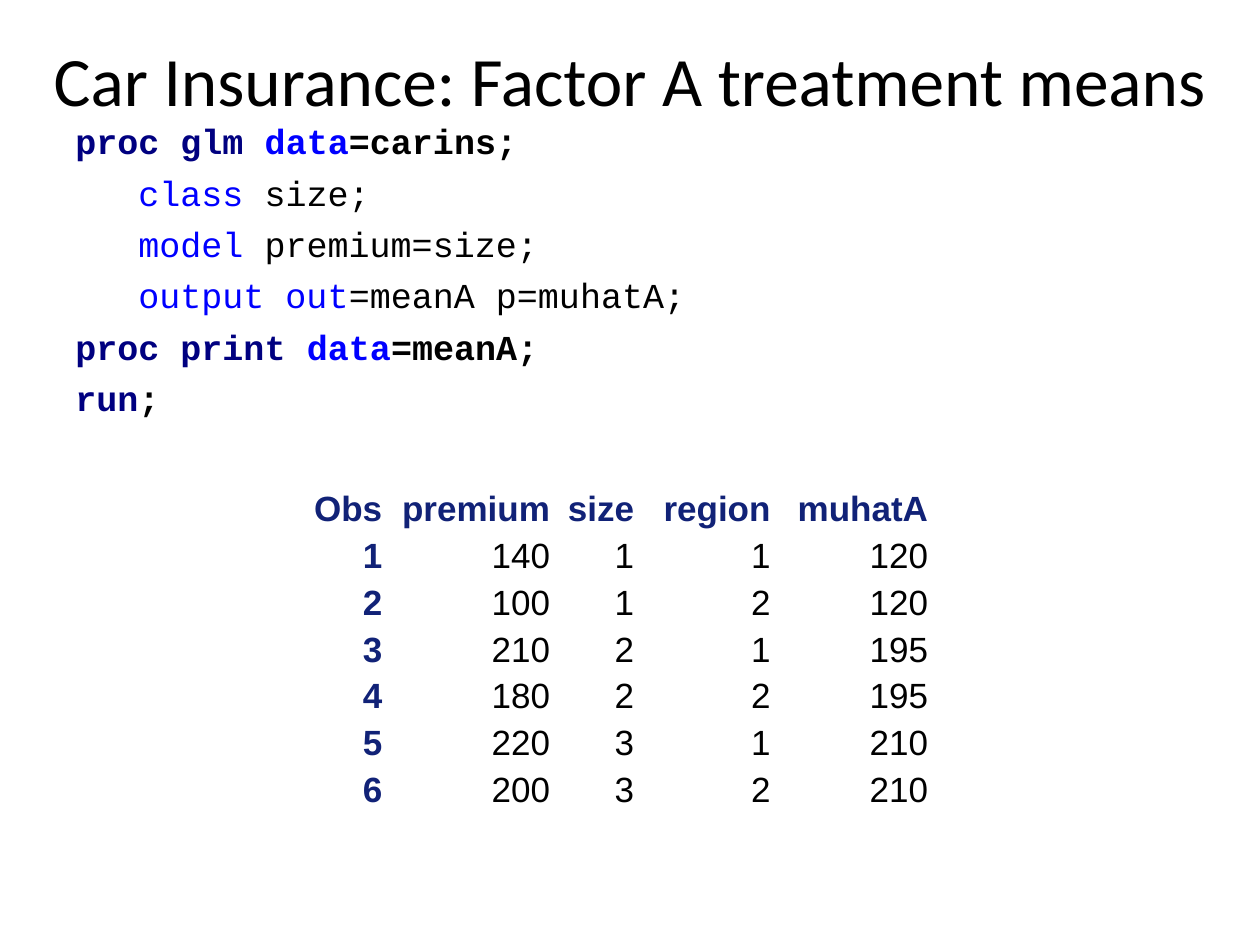
from dataclasses import dataclass

from pptx import Presentation
from pptx.dml.color import RGBColor
from pptx.enum.text import MSO_ANCHOR, PP_ALIGN
from pptx.util import Pt


@dataclass(frozen=True)
class Theme:
    black: RGBColor = RGBColor(0, 0, 0)
    navy: RGBColor = RGBColor(0, 0, 0x80)
    blue: RGBColor = RGBColor(0, 0, 0xFF)
    head: RGBColor = RGBColor(0x11, 0x22, 0x77)
    title: float = 39.6
    body: float = 20


THEME = Theme()

# Each line: indent in points, bold, then (text, colour) parts
CODE = [
    (0, True, [("proc glm ", THEME.navy), ("data", THEME.blue), ("=carins;", THEME.black)]),
    (36, False, [("class", THEME.blue), (" size;", THEME.black)]),
    (36, False, [("model", THEME.blue), (" premium=size;", THEME.black)]),
    (36, False, [("output out", THEME.blue), ("=meanA p=muhatA;", THEME.black)]),
    (0, True, [("proc print ", THEME.navy), ("data", THEME.blue), ("=meanA;", THEME.black)]),
    (0, True, [("run", THEME.navy), (";", THEME.black)]),
]

MEANS = [
    ("Obs", "premium", "size", "region", "muhatA"),
    (1, 140, 1, 1, 120),
    (2, 100, 1, 2, 120),
    (3, 210, 2, 1, 195),
    (4, 180, 2, 2, 195),
    (5, 220, 3, 1, 210),
    (6, 200, 3, 2, 210),
]
WIDTHS = (54, 96, 48, 78, 90)
ROW = 25.7


def set_font(font, name, size, color=None, bold=False):
    font.name, font.size, font.bold = name, Pt(size), bold
    if color is not None:
        font.color.rgb = color


def add_box(slide, left, top, width, height):
    box = slide.shapes.add_textbox(Pt(left), Pt(top), Pt(width), Pt(height))
    box.text_frame.word_wrap = True
    return box.text_frame


def add_title(slide, text):
    frame = add_box(slide, 0, 0, 720, 90)
    frame.vertical_anchor = MSO_ANCHOR.MIDDLE
    para = frame.paragraphs[0]
    para.text = text
    para.alignment = PP_ALIGN.CENTER
    set_font(para.font, "Calibri", THEME.title, THEME.black)


def add_code(slide, lines):
    frame = add_box(slide, 36, 65, 648, 198)
    for i, (indent, bold, parts) in enumerate(lines):
        para = frame.add_paragraph() if i else frame.paragraphs[0]
        para.space_before = Pt(5.3)
        para._p.get_or_add_pPr().set("marL", str(Pt(indent)))
        set_font(para.font, "Courier New", THEME.body, bold=bold)
        for text, color in parts:
            run = para.add_run()
            run.text = text
            run.font.color.rgb = color


def fill_cell(cell, value, strong):
    cell.fill.background()
    cell.margin_left = cell.margin_right = Pt(3.6)
    cell.margin_top, cell.margin_bottom = Pt(2.7), 0
    cell.vertical_anchor = MSO_ANCHOR.MIDDLE
    para = cell.text_frame.paragraphs[0]
    para.text = str(value)
    para.alignment = PP_ALIGN.RIGHT
    color = THEME.head if strong else THEME.black
    set_font(para.font, "Arial", THEME.body, color, strong)


def add_means(slide, data):
    frame = slide.shapes.add_table(
        len(data), len(WIDTHS), Pt(168), Pt(276.5), Pt(sum(WIDTHS)), Pt(ROW * len(data)))
    table = frame.table
    table.first_row = table.horz_banding = False
    for col, width in zip(table.columns, WIDTHS):
        col.width = Pt(width)
    for r, values in enumerate(data):
        table.rows[r].height = Pt(ROW)
        for c, value in enumerate(values):
            fill_cell(table.cell(r, c), value, r == 0 or c == 0)


def main():
    deck = Presentation()
    deck.slide_width, deck.slide_height = Pt(720), Pt(540)
    slide = deck.slides.add_slide(deck.slide_layouts[6])
    add_title(slide, "Car Insurance: Factor A treatment means")
    add_code(slide, CODE)
    add_means(slide, MEANS)
    deck.save("out.pptx")


if __name__ == "__main__":
    main()
